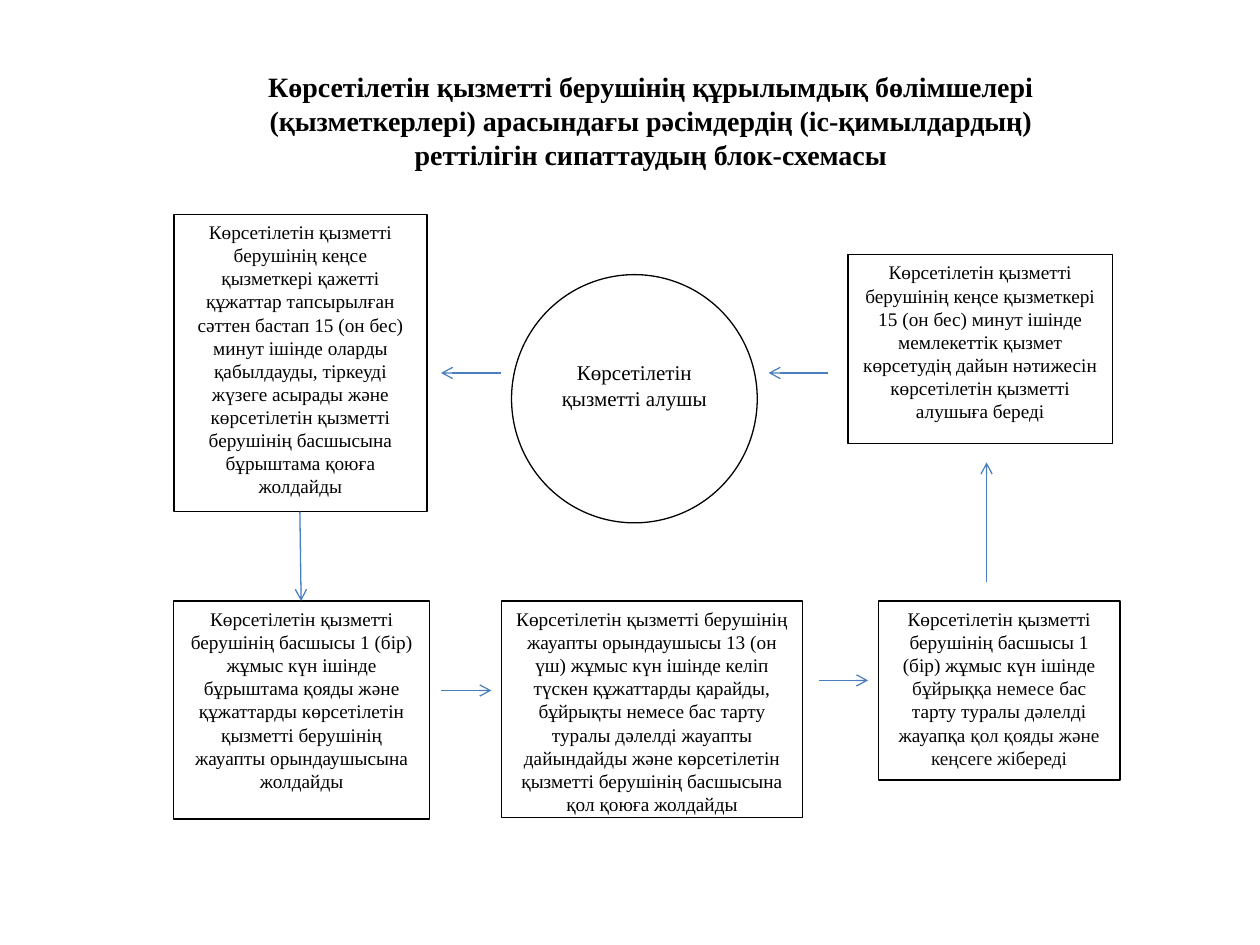
from lxml import etree
from pptx import Presentation
from pptx.dml.color import RGBColor
from pptx.enum.shapes import MSO_CONNECTOR, MSO_SHAPE
from pptx.enum.text import MSO_ANCHOR, PP_ALIGN
from pptx.oxml.ns import qn
from pptx.util import Inches, Pt

RECTANGLE, CIRCLE = MSO_SHAPE.RECTANGLE, MSO_SHAPE.OVAL
STRAIGHT = MSO_CONNECTOR.STRAIGHT
TOP, MIDDLE = MSO_ANCHOR.TOP, MSO_ANCHOR.MIDDLE
CENTER = PP_ALIGN.CENTER

THEME = {
    "font": "Times New Roman",
    "black": RGBColor(0x00, 0x00, 0x00),
    "soft_black": RGBColor(0x0D, 0x0D, 0x0D),
    "white": RGBColor(0xFF, 0xFF, 0xFF),
    "arrow": RGBColor(0x4B, 0x7E, 0xBC),
    "title_size": 16, "step_size": 11, "client_size": 12, "gap_size": 14,
    "line": Pt(0.75), "space_after": Pt(10),
}

# Content: a text is a list of (words, size, colour) runs
TITLE = ("Көрсетілетін қызметті берушінің құрылымдық бөлімшелері (қызметкерлері) "
         "арасындағы рәсімдердің (іс-қимылдардың) реттілігін сипаттаудың блок-схемасы")
CLIENT = [("Көрсетілетін", "client_size", "black"), (" ", "gap_size", "black"),
          ("қызметті алушы", "client_size", "black")]
LOWER_ROW = 4.77
STEPS = [  # (left, top, width, height), (words, colour) runs
    ((1.38, 1.7, 2.01, 2.36), [
        ("Көрсетілетін қызметті берушінің кеңсе қызметкері қажетті құжаттар тапсырылған "
         "сәттен бастап 15 (он бес) минут ішінде оларды қабылдауды, тіркеуді жүзеге асырады "
         "және көрсетілетін қызметті берушінің басшысына бұрыштама қоюға жолдайды", "black")]),
    ((1.38, LOWER_ROW, 2.03, 1.73), [
        ("Көрсетілетін қызметті берушінің басшысы 1 (бір) жұмыс күн ішінде бұрыштама қояды "
         "және құжаттарды көрсетілетін қызметті берушінің жауапты орындаушысына жолдайды",
         "black")]),
    ((3.98, LOWER_ROW, 2.39, 1.72), [
        ("Көрсетілетін қызметті берушінің жауапты орындаушысы 13 (он үш) жұмыс күн ішінде "
         "келіп түскен құжаттарды қарайды, бұйрықты немесе бас тарту туралы дәлелді жауапты "
         "дайындайды және көрсетілетін қызметті берушінің басшысына қол қоюға жолдайды",
         "black")]),
    ((6.97, LOWER_ROW, 1.92, 1.42), [
        ("Көрсетілетін қызметті берушінің басшысы 1 (бір) жұмыс күн ішінде ", "black"),
        ("бұйрыққа немесе ", "soft_black"),
        ("бас тарту туралы дәлелді жауапқа ", "black"),
        ("қол қояды және кеңсеге жібереді", "soft_black")]),
    ((6.73, 2.02, 2.1, 1.5), [
        ("Көрсетілетін қызметті берушінің кеңсе қызметкері 15 (он бес) минут ішінде "
         "мемлекеттік қызмет көрсетудің дайын нәтижесін көрсетілетін қызметті алушыға береді",
         "black")]),
]
ARROWS = [  # start x, start y, end x, end y
    (3.98, 2.96, 3.5, 2.96),
    (2.38, 4.06, 2.39, LOWER_ROW),
    (3.5, 5.48, 3.9, 5.48),
    (6.5, 5.4, 6.89, 5.4),
    (7.83, 4.62, 7.83, 3.67),
    (6.57, 2.96, 6.1, 2.96),
]


def write(shape, runs, anchor=TOP, bold=False):
    """Fill a shape with one centred paragraph of formatted runs."""
    text_frame = shape.text_frame
    text_frame.word_wrap = True
    text_frame.vertical_anchor = anchor
    paragraph = text_frame.paragraphs[0]
    paragraph.alignment = CENTER
    for words, size, colour in runs:
        run = paragraph.add_run()
        run.text = words
        run.font.name = THEME["font"]
        run.font.size = Pt(THEME[size])
        run.font.bold = bold
        run.font.color.rgb = THEME[colour]
    return paragraph


def add_box(slide, kind, place, runs):
    shape = slide.shapes.add_shape(kind, *map(Inches, place))
    shape.shadow.inherit = False
    shape.fill.solid()
    shape.fill.fore_color.rgb = THEME["white"]
    shape.line.color.rgb = THEME["black"]
    shape.line.width = THEME["line"]
    write(shape, runs).space_after = THEME["space_after"]
    return shape


def add_arrow(slide, ends):
    connector = slide.shapes.add_connector(STRAIGHT, *map(Inches, ends))
    connector.line.color.rgb = THEME["arrow"]
    connector.line.width = THEME["line"]
    properties = connector._element.spPr
    etree.SubElement(properties.find(qn("a:ln")), qn("a:tailEnd"), type="arrow")
    etree.SubElement(properties, qn("a:effectLst"))


def main():
    presentation = Presentation()
    presentation.slide_width, presentation.slide_height = Inches(10), Inches(7.5)
    slide = presentation.slides.add_slide(presentation.slide_layouts[6])

    # Title
    title = slide.shapes.add_textbox(*map(Inches, (1.54, 0.5, 7.25, 0.91)))
    write(title, [(TITLE, "title_size", "black")], MIDDLE, bold=True)

    # Steps of the procedure
    for place, runs in STEPS:
        add_box(slide, RECTANGLE, place,
                [(words, "step_size", colour) for words, colour in runs])

    # Client in the middle, its text set above the centre
    client = add_box(slide, CIRCLE, (4.06, 2.18, 1.95, 1.97), CLIENT)
    client.text_frame.margin_top = Inches(0.36)

    # Flow between the steps
    for ends in ARROWS:
        add_arrow(slide, ends)

    presentation.save("out.pptx")


if __name__ == "__main__":
    main()
